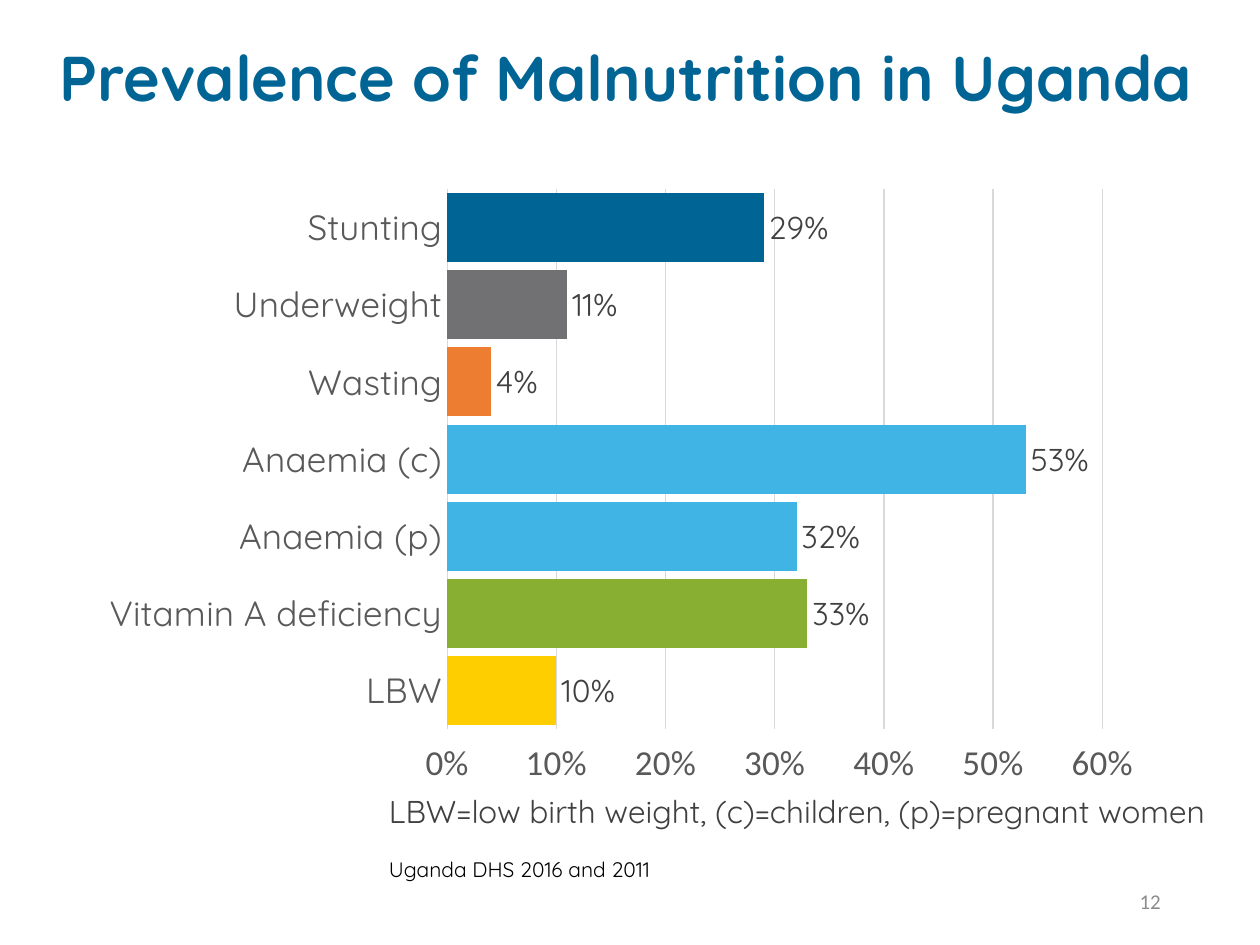
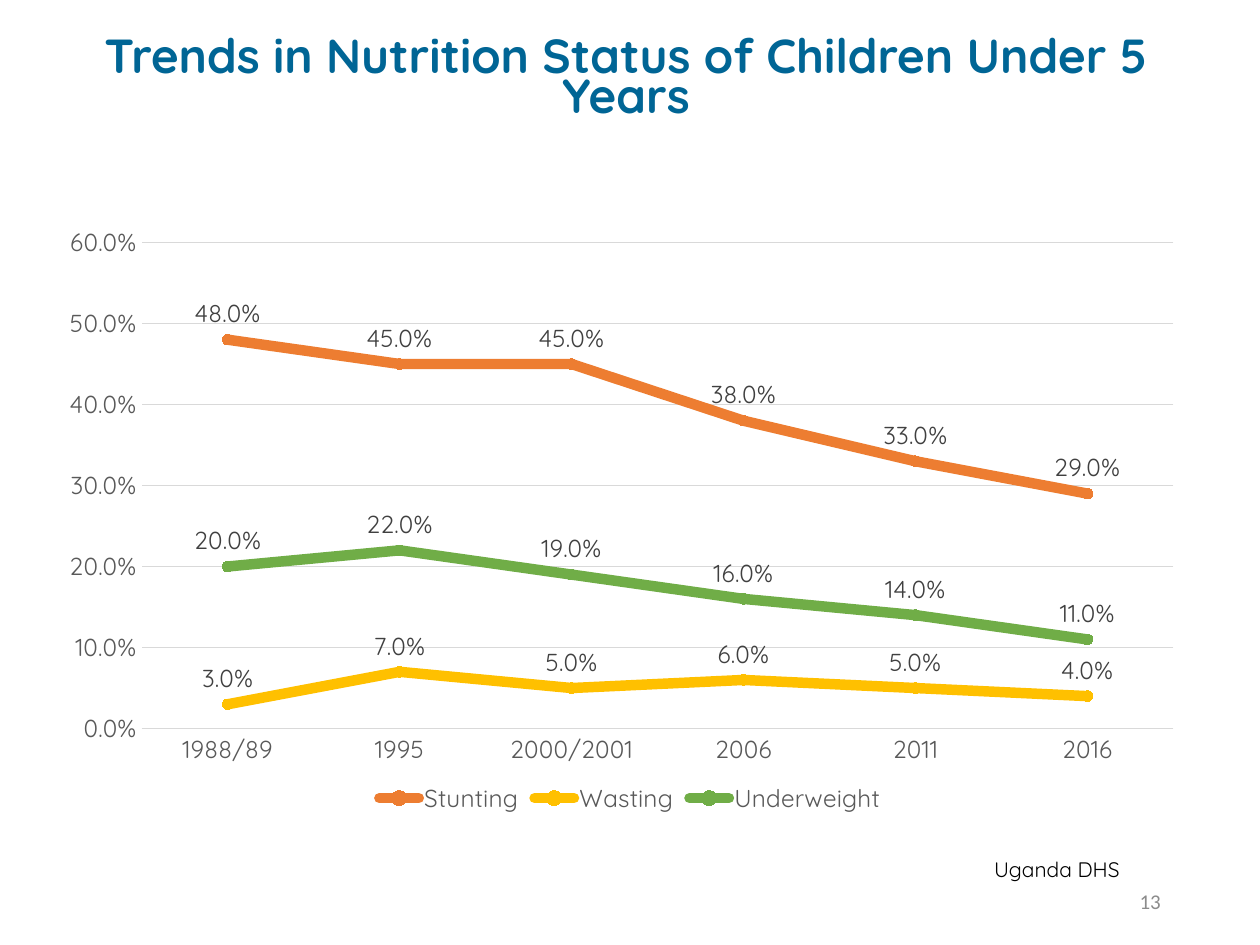
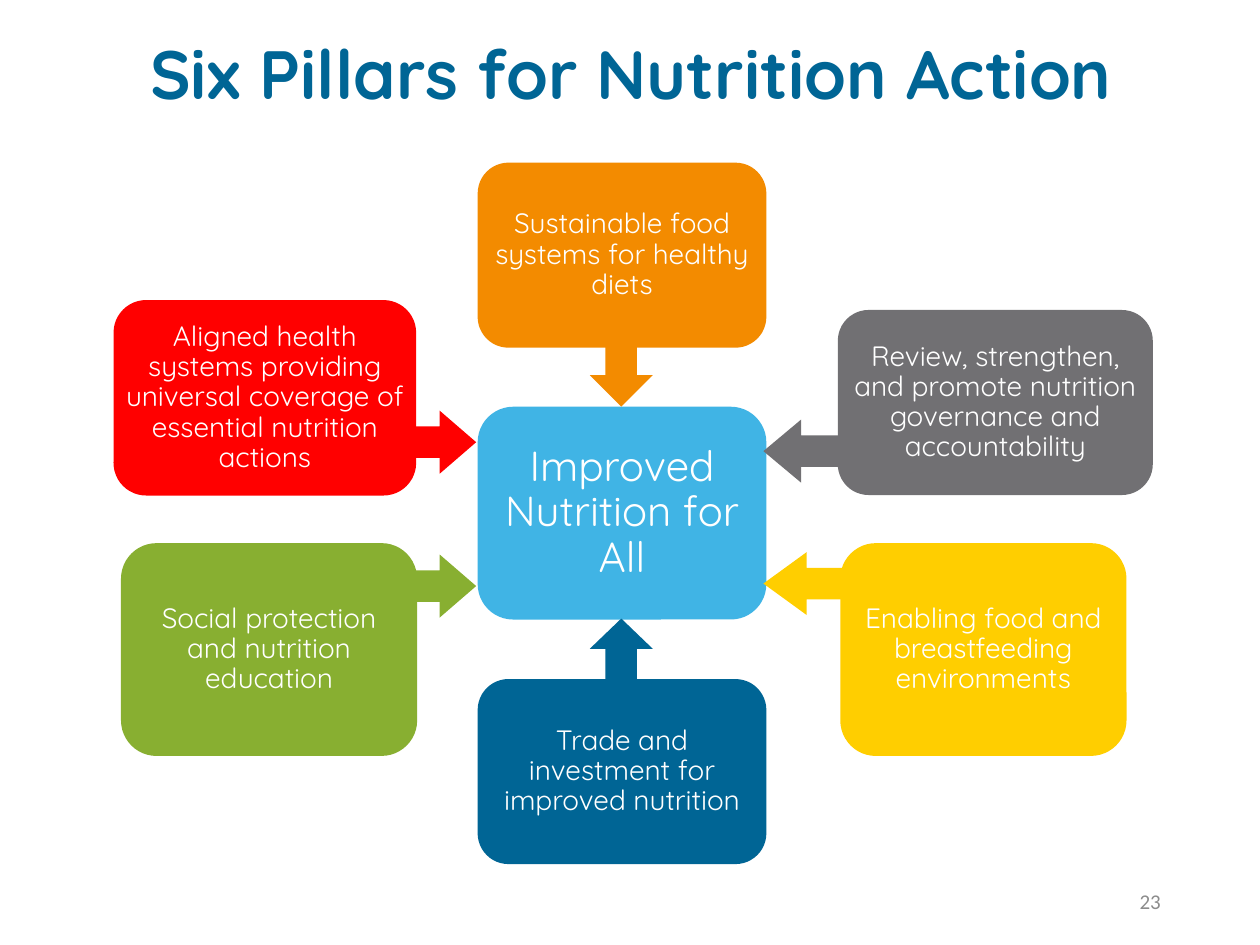
from lxml import etree
from pptx import Presentation
from pptx import util as u
from pptx.chart import data as cd
from pptx.dml import color
from pptx.enum import chart as ec, shapes, text
from pptx.oxml import ns

# Shared look
FONT, PLAIN = "Quicksand", "Calibri"
NAVY, SKY, GREEN, YELLOW = "006595", "40B4E5", "88AF31", "FFCE00"
GREY, ORANGE, RED, WHITE = "717073", "F38B00", "FF0000", "FFFFFF"
RUST, GOLD, LEAF = "ED7D31", "FFC000", "70AD47"
AXIS, GRID, DARK, PAGE = "595959", "D9D9D9", "404040", "8C8C8C"
ALIGN, SHAPE = text.PP_ALIGN, shapes.MSO_SHAPE


def rgb(code):
    return color.RGBColor.from_string(code)


def cm(*nums):
    return [u.Cm(n) for n in nums]


def style(font, size, ink, name=FONT, bold=False):
    font.size, font.name, font.bold = u.Pt(size), name, bold
    font.color.rgb = rgb(ink)


def stroke(line, ink, width):
    line.color.rgb = rgb(ink)
    line.width = u.Pt(width)


class Deck:
    """Holds the style and the current slide."""

    def __init__(self):
        self.prs = Presentation()
        self.prs.slide_width, self.prs.slide_height = cm(25.4, 19.05)
        self.slide = None

    def page(self, title, num, size, box=(0.76, 0.74, 23.72, 1.8), space=0.9):
        self.slide = self.prs.slides.add_slide(self.prs.slide_layouts[6])
        self.label(title, box, size, NAVY, bold=True, align=ALIGN.CENTER,
                   mid=True, space=space)
        self.label(str(num), (17.93, 17.65, 5.72, 1.02), 12, PAGE, PLAIN,
                   align=ALIGN.RIGHT, mid=True)

    def phrase(self, frame, words, align, space):
        para = frame.paragraphs[0]
        para.text, para.alignment = words, align
        if space:
            para.line_spacing = space
        return para.font

    def label(self, words, box, size, ink, name=FONT, bold=False,
              align=ALIGN.LEFT, mid=False, space=None, wrap=True):
        frame = self.slide.shapes.add_textbox(*cm(*box)).text_frame
        frame.word_wrap = wrap
        if mid:
            frame.vertical_anchor = text.MSO_ANCHOR.MIDDLE
        style(self.phrase(frame, words, align, space), size, ink, name, bold)

    def shape(self, kind, box, fill):
        item = self.slide.shapes.add_shape(kind, *cm(*box))
        item.shadow.inherit = False
        item.fill.solid()
        item.fill.fore_color.rgb = rgb(fill)
        item.line.fill.background()
        return item

    def card(self, words, box, fill, size=16):
        frame = self.shape(SHAPE.ROUNDED_RECTANGLE, box, fill).text_frame
        frame.word_wrap = True
        frame.vertical_anchor = text.MSO_ANCHOR.MIDDLE
        frame.margin_left = frame.margin_right = u.Cm(0.05)
        frame.margin_top = frame.margin_bottom = u.Cm(0.05)
        style(self.phrase(frame, words, ALIGN.CENTER, 0.9), size, WHITE)

    def arrow(self, kind, box, fill):
        item = self.shape(kind, box, fill)
        flat = kind in (SHAPE.LEFT_ARROW, SHAPE.RIGHT_ARROW)
        long = box[2] if flat else box[3]
        item.adjustments[1] = long / 2 / min(box[2:])  # head is half the length

    def chart(self, kind, box, cats, rows, form, size):
        data = cd.CategoryChartData(number_format=form)
        data.categories = cats
        for name, vals in rows:
            data.add_series(name, vals)
        chart = self.slide.shapes.add_chart(kind, *cm(*box), data).chart
        chart.has_title = chart.has_legend = False
        style(chart.font, 10, "000000", PLAIN)
        cat, val = chart.category_axis, chart.value_axis
        for axis in (cat, val):
            style(axis.tick_labels.font, size, AXIS)
            axis.major_tick_mark = ec.XL_TICK_MARK.NONE
        cat.has_major_gridlines = False
        stroke(cat.format.line, GRID, 0.75)
        val.minimum_scale, val.maximum_scale, val.major_unit = 0, 0.6, 0.1
        val.has_major_gridlines = True
        stroke(val.major_gridlines.format.line, GRID, 0.75)
        val.format.line.fill.background()
        val.tick_labels.number_format = form
        val.tick_labels.number_format_is_linked = False
        chart.plots[0].vary_by_categories = False
        return chart

    def values(self, row, form, size, spot):
        tags = row.data_labels
        tags.show_value, tags.position = True, spot
        tags.number_format, tags.number_format_is_linked = form, False
        style(tags.font, size, DARK)

    def place(self, chart, **parts):
        """Fix the inner plot area as shares of the chart."""
        area = chart.element.xpath("c:chart/c:plotArea")[0]
        for old in area.findall(ns.qn("c:layout")):
            area.remove(old)
        layout = etree.Element(ns.qn("c:layout"))
        area.insert(0, layout)
        hand = etree.SubElement(layout, ns.qn("c:manualLayout"))
        marks = dict(layoutTarget="inner", xMode="edge", yMode="edge", **parts)
        for tag, val in marks.items():
            etree.SubElement(hand, ns.qn("c:" + tag)).set("val", str(val))


def bars(deck):
    deck.page("Prevalence of Malnutrition in Uganda", 12, 36.1)
    rates = [("LBW", 0.1, YELLOW), ("Vitamin A deficiency", 0.33, GREEN),
             ("Anaemia (p)", 0.32, SKY), ("Anaemia (c)", 0.53, SKY),
             ("Wasting", 0.04, RUST), ("Underweight", 0.11, GREY),
             ("Stunting", 0.29, NAVY)]
    cats, vals, inks = zip(*rates)
    void = [None] * len(cats)
    rows = [("Series 1", void), ("Series 2", vals), ("Series 3", void)]
    chart = deck.chart(ec.XL_CHART_TYPE.BAR_CLUSTERED,
                       (1.78, 3.56, 21.49, 12.52), cats, rows, "0%", 20)
    chart.value_axis.tick_labels.font.name = PLAIN
    chart.value_axis.major_tick_mark = ec.XL_TICK_MARK.OUTSIDE
    plot = chart.plots[0]
    plot.overlap, plot.gap_width = 94, 0
    row = plot.series[1]
    for i, ink in enumerate(inks):
        fill = row.points[i].format.fill
        fill.solid()
        fill.fore_color.rgb = rgb(ink)
    deck.values(row, "0%", 18, ec.XL_LABEL_POSITION.OUTSIDE_END)
    deck.label("LBW=low birth weight, (c)=children, (p)=pregnant women",
               (7.59, 15.85, 18.36, 1.02), 18, DARK, wrap=False)
    deck.label("Uganda DHS 2016 and 2011", (7.59, 17.15, 7.06, 1.04), 12, "000000")


def trends(deck):
    deck.page("Trends in Nutrition Status of Children Under 5 Years", 13, 27.3,
              space=0.7)
    cats = ["1988/89", "1995", "2000/2001", "2006", "2011", "2016"]
    rows = [("Stunting", (0.48, 0.45, 0.45, 0.38, 0.33, 0.29)),
            ("Wasting", (0.03, 0.07, 0.05, 0.06, 0.05, 0.04)),
            ("Underweight", (0.2, 0.22, 0.19, 0.16, 0.14, 0.11))]
    chart = deck.chart(ec.XL_CHART_TYPE.LINE_MARKERS, (1.4, 2.51, 22.48, 14),
                       cats, rows, "0.0%", 14)
    deck.place(chart, x=0.06, y=0.17, w=0.93, h=0.7)
    chart.has_legend = True
    chart.legend.position = ec.XL_LEGEND_POSITION.BOTTOM
    chart.legend.include_in_layout = False
    style(chart.legend.font, 14, AXIS)
    for row, ink in zip(chart.plots[0].series, (RUST, GOLD, LEAF)):
        row.smooth = False
        stroke(row.format.line, ink, 6)
        row.marker.style, row.marker.size = ec.XL_MARKER_STYLE.CIRCLE, 6
        row.marker.format.fill.solid()
        row.marker.format.fill.fore_color.rgb = rgb(ink)
        stroke(row.marker.format.line, ink, 0.75)
        deck.values(row, "0.0%", 14, ec.XL_LABEL_POSITION.ABOVE)
    for line in chart.element.xpath(".//c:ser/c:spPr/a:ln"):
        line.set("cap", "rnd")
    deck.label("Uganda DHS", (19.79, 17.15, 3.89, 1.04), 12, "000000")


def pillars(deck):
    deck.page("Six Pillars for Nutrition Action", 23, 39, (0.97, 0.46, 23.5, 2.21))
    deck.card("Improved Nutrition for All", (9.63, 8.2, 5.82, 4.29), SKY, 24)
    # Each pillar: words, colour, card, arrow kind, arrow box
    items = [
        ("Sustainable food systems for healthy diets", ORANGE,
         (9.63, 3.28, 5.82, 3.73), SHAPE.DOWN_ARROW, (11.89, 6.93, 1.27, 1.27)),
        ("Review, strengthen, and promote nutrition governance and accountability",
         GREY, (16.89, 6.25, 6.35, 3.73), SHAPE.LEFT_ARROW,
         (15.39, 8.46, 1.52, 1.27)),
        ("Enabling food and breastfeeding environments", YELLOW,
         (16.94, 10.95, 5.77, 4.29), SHAPE.LEFT_ARROW, (15.39, 11.13, 1.75, 1.27)),
        ("Trade and investment for improved nutrition", NAVY,
         (9.63, 13.69, 5.82, 3.73), SHAPE.UP_ARROW, (11.89, 12.47, 1.27, 1.22)),
        ("Social protection and nutrition education", GREEN,
         (2.44, 10.95, 5.97, 4.29), SHAPE.RIGHT_ARROW, (8.13, 11.18, 1.47, 1.27)),
        ("Aligned health systems providing universal coverage of essential "
         "nutrition actions", RED,
         (2.29, 6.05, 6.1, 3.94), SHAPE.RIGHT_ARROW, (8.13, 8.28, 1.47, 1.27)),
    ]
    for words, ink, box, kind, tip in items:
        deck.card(words, box, ink)
        deck.arrow(kind, tip, ink)


def main():
    deck = Deck()
    bars(deck)
    trends(deck)
    pillars(deck)
    deck.prs.save("out.pptx")


if __name__ == "__main__":
    main()
